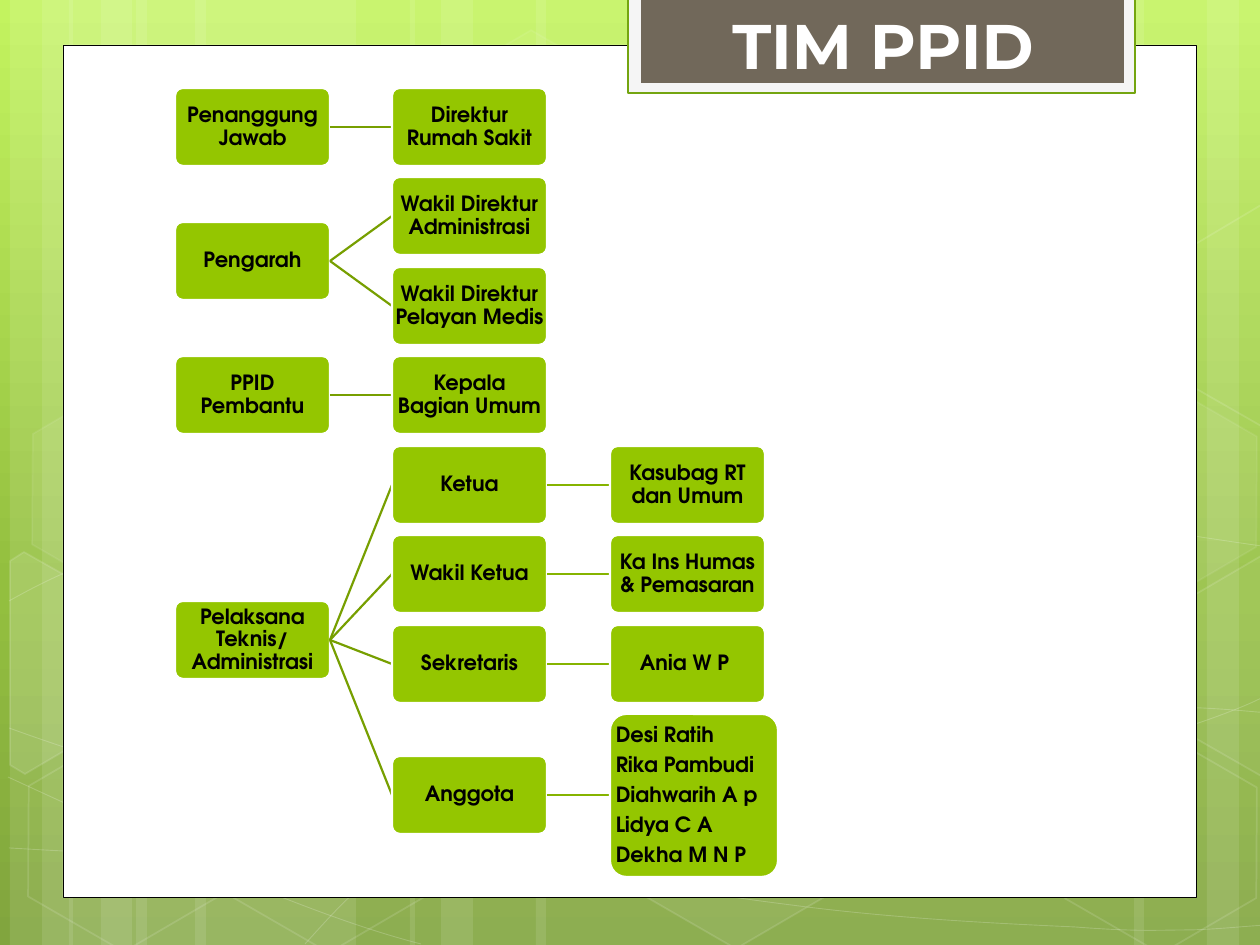
from dataclasses import dataclass
import copy

import pptx
import pptx.dml.color
import pptx.enum.shapes
import pptx.enum.text
import pptx.oxml
import pptx.oxml.ns
import pptx.util

SCALE = 914400 / 126
SLIDE_WIDTH, SLIDE_HEIGHT = 1260, 945
COLORS = {
    "sky": "C3F35F", "leaf": "93BF3F", "moss": "81A53E",
    "white": "FFFFFF", "black": "000000", "frame": "F5F5F5",
    "frame_line": "74A510", "brown": "71685A", "box": "94C600",
    "link_1": "779F00", "link_2": "86B400",
}
BODY_FONT, TITLE_FONT = "TeX Gyre Adventor", "Montserrat"
ALIGN = pptx.enum.text.PP_ALIGN
ANCHOR = pptx.enum.text.MSO_ANCHOR
SHAPE = pptx.enum.shapes.MSO_SHAPE

COLUMNS = (175, 392, 610)
BOX_WIDTH, BOX_HEIGHT = 155, 78
FIRST_TOP = 88
TWO_ROWS = 179


@dataclass(frozen=True)
class Role:
    lines: tuple[str, ...]
    children: tuple["Role", ...] = ()
    width: int = BOX_WIDTH
    height: int = BOX_HEIGHT
    inset: int = 0


@dataclass(frozen=True)
class Hexagon:
    left: int
    top: int
    fill: int | None
    line: int


def role(text: str, *children: Role, inset: int = 0) -> Role:
    return Role((text,), children, inset=inset)


MEMBERS = Role(("Desi Ratih", "Rika Pambudi", "Diahwarih A p", "Lidya C A", "Dekha M N P"),
               width=168, height=163, inset=1)
TEAM = (
    role("Penanggung Jawab", role("Direktur Rumah Sakit")),
    role("Pengarah", role("Wakil Direktur Administrasi"), role("Wakil Direktur Pelayan Medis")),
    role("PPID Pembantu", role("Kepala Bagian Umum", inset=2)),
    role("Pelaksana Teknis/ Administrasi",
         role("Ketua", role("Kasubag RT dan Umum")),
         role("Wakil Ketua", role("Ka Ins Humas & Pemasaran")),
         role("Sekretaris", role("Ania W P ")),
         role("Anggota", MEMBERS)),
)

BANDS = ((136, 220), (10, 63), (42, 105), (195, 220), (69, 63), (101, 105),
         (924, 220), (1207, 63), (1134, 105), (536, 388), (410, 63), (441, 105))
# Each curve is a start point followed by groups of three Bézier points.
CURVES = (
    ((9, 848), (77, 852), (145, 856), (239, 854), (334, 853), (451, 851), (577, 838),
     (703, 825), (882, 801), (998, 777), (1113, 753), (1231, 716), (1269, 694)),
    ((9, 601), (45, 581), (82, 562), (152, 543), (224, 524), (326, 496), (437, 488),
     (549, 479), (685, 478), (824, 488), (963, 498), (1193, 537), (1269, 547)),
    ((8, 777), (160, 847), (311, 916), (421, 944)),
    ((9, 728), (48, 742), (88, 756), (161, 776), (234, 795), (344, 827), (450, 848),
     (554, 869), (687, 892), (791, 905), (896, 919), (1008, 924), (1075, 927),
     (1140, 932), (1158, 930), (1191, 930), (1223, 929), (1246, 926), (1269, 925)),
    ((305, 944), (328, 919), (350, 893), (381, 871), (411, 848), (454, 822), (489, 805),
     (524, 788), (546, 779), (592, 767), (638, 755), (722, 737), (766, 728),
     (812, 719), (818, 719), (857, 717), (896, 713), (958, 709), (1000, 708),
     (1045, 707), (1116, 708), (1116, 708), (1144, 708), (1173, 708), (1201, 708),
     (1223, 709), (1245, 711), (1256, 712), (1268, 713), (1264, 712), (1268, 713)),
)
HEXAGONS = (
    Hexagon(421, 45, 4, 8), Hexagon(626, 742, 6, 12), Hexagon(14, 745, None, 12),
    Hexagon(18, 393, 7, 8), Hexagon(219, 746, None, 12), Hexagon(949, 571, 10, 12),
    Hexagon(1051, 747, None, 12), Hexagon(1051, 396, 7, 8),
)
CUT_HEXAGONS = (
    (((10, 561), (24, 552), (121, 607), (120, 718), (25, 774), (10, 765)), 10),
    (((1167, 611), (1261, 556), (1271, 562), (1271, 772), (1263, 777), (1167, 722)), 4),
    (((1167, 261), (1261, 205), (1273, 212), (1271, 422), (1263, 427), (1167, 372)), None),
)


def px(length: float) -> pptx.util.Emu:
    return pptx.util.Emu(round(length * SCALE))


def rgb(name: str) -> pptx.dml.color.RGBColor:
    return pptx.dml.color.RGBColor.from_string(COLORS[name])


def new_element(tag: str, attributes: str = ""):
    return pptx.oxml.parse_xml(f'<a:{tag} {pptx.oxml.ns.nsdecls("a")} {attributes}/>')


def set_opacity(shape, tag: str, percent: int) -> None:
    """Make the fill (a:solidFill) or the line (a:ln) of a shape see-through."""
    color = shape.element.spPr.find(pptx.oxml.ns.qn(tag)).find(".//" + pptx.oxml.ns.qn("a:srgbClr"))
    color.append(new_element("alpha", f'val="{percent * 1000}"'))


def style(shape, fill: str | None = None, line: str | None = None, line_width: float = 1,
          fill_opacity: int = 100, line_opacity: int = 100) -> None:
    shape.shadow.inherit = False
    if fill:
        shape.fill.solid()
        shape.fill.fore_color.rgb = rgb(fill)
        if fill_opacity < 100:
            set_opacity(shape, "a:solidFill", fill_opacity)
    else:
        shape.fill.background()
    if line:
        shape.line.color.rgb = rgb(line)
        shape.line.width = pptx.util.Pt(line_width)
        if line_opacity < 100:
            set_opacity(shape, "a:ln", line_opacity)
    else:
        shape.line.fill.background()


def add_box(slide, kind, left: int, top: int, width: int, height: int, **look):
    shape = slide.shapes.add_shape(kind, px(left), px(top), px(width), px(height))
    style(shape, **look)
    return shape


def add_path(slide, points, closed: bool, **look):
    builder = slide.shapes.build_freeform(*points[0], scale=SCALE)
    builder.add_line_segments(points[1:], close=closed)
    shape = builder.convert_to_shape()
    style(shape, **look)
    return shape


def bend(shape) -> None:
    """Merge every three line segments of a path into one cubic Bézier."""
    segments = list(shape.element.iter(pptx.oxml.ns.qn("a:lnTo")))
    for start in range(0, len(segments), 3):
        curve = new_element("cubicBezTo")
        segments[start].addprevious(curve)
        for segment in segments[start:start + 3]:
            curve.append(segment[0])
            segment.getparent().remove(segment)


def write(shape, lines: tuple[str, ...], *, font: str, size: int, color: str, align=ALIGN.CENTER,
          anchor=ANCHOR.MIDDLE, inset: tuple[int, int] = (0, 0),
          line_spacing: float = 1.0, space_after: float = 0) -> None:
    frame = shape.text_frame
    frame.word_wrap = True
    frame.vertical_anchor = anchor
    frame.margin_left = frame.margin_right = px(inset[0])
    frame.margin_top = frame.margin_bottom = px(inset[1])
    for index, line in enumerate(lines):
        paragraph = frame.add_paragraph() if index else frame.paragraphs[0]
        paragraph.alignment = align
        paragraph.line_spacing = line_spacing
        paragraph.space_after = pptx.util.Pt(space_after)
        run = paragraph.add_run()
        run.text = line
        run.font.name, run.font.size, run.font.bold = font, pptx.util.Pt(size), True
        run.font.color.rgb = rgb(color)


def draw_background(slide) -> None:
    fill = slide.background.fill
    fill.gradient()
    fill.gradient_angle = 270
    last = list(slide.element.iter(pptx.oxml.ns.qn("a:gs")))[-1]
    last.addnext(copy.deepcopy(last))
    for stop, (position, color) in zip(fill.gradient_stops,
                                       ((0, "sky"), (0.62, "leaf"), (1, "moss"))):
        stop.position = position
        stop.color.rgb = rgb(color)
    for left, width in BANDS:
        add_box(slide, SHAPE.RECTANGLE, left, 0, width, SLIDE_HEIGHT,
                fill="white", fill_opacity=10)
    for curve in CURVES:
        bend(add_path(slide, curve, False, line="white", line_width=0.5, line_opacity=20))
    for item in HEXAGONS:
        shape = add_box(slide, SHAPE.HEXAGON, item.left, item.top, 220, 192,
                        fill="white" if item.fill else None, fill_opacity=item.fill or 100,
                        line="white", line_opacity=item.line)
        shape.adjustments[0], shape.adjustments[1] = 0.285, 1.155
        shape.rotation = 30
    for points, opacity in CUT_HEXAGONS:
        add_path(slide, points, True, fill="white" if opacity else None,
                 fill_opacity=opacity or 100, line="white", line_opacity=12)


def draw_link(slide, depth: int, start: int, end: int) -> None:
    link = slide.shapes.add_connector(
        pptx.enum.shapes.MSO_CONNECTOR.STRAIGHT,
        px(COLUMNS[depth] + BOX_WIDTH), px(start), px(COLUMNS[depth + 1]), px(end))
    link.line.color.rgb = rgb(f"link_{depth + 1}")
    link.line.width = pptx.util.Pt(1.25)
    link.element.spPr.append(new_element("effectLst"))


def count_rows(member: Role) -> int:
    return sum(map(count_rows, member.children)) or 1


def place_children(member: Role, row: int) -> list[tuple[Role, int]]:
    """Pair each child with its first row."""
    placed = []
    for child in member.children:
        placed.append((child, row))
        row += count_rows(child)
    return placed


def middle_of(member: Role, row: int) -> int:
    centers = [middle_of(*placed) for placed in place_children(member, row)]
    if centers:
        return (centers[0] + centers[-1]) // 2
    return FIRST_TOP + row * TWO_ROWS // 2 + member.height // 2


def draw_role(slide, member: Role, row: int, depth: int = 0) -> None:
    middle = middle_of(member, row)
    box = add_box(slide, SHAPE.ROUNDED_RECTANGLE, COLUMNS[depth], middle - member.height // 2,
                  member.width, member.height, fill="box", line="white", line_width=1.25)
    box.adjustments[0] = 0.1
    write(box, member.lines, font=BODY_FONT, size=12, color="black", line_spacing=0.9,
          space_after=4.2, inset=(member.inset, 0),
          align=ALIGN.LEFT if len(member.lines) > 1 else ALIGN.CENTER)
    for child, child_row in place_children(member, row):
        draw_link(slide, depth, middle, middle_of(child, child_row))
        draw_role(slide, child, child_row, depth + 1)


def main() -> None:
    presentation = pptx.Presentation()
    presentation.slide_width, presentation.slide_height = px(SLIDE_WIDTH), px(SLIDE_HEIGHT)
    slide = presentation.slides.add_slide(presentation.slide_layouts[6])
    draw_background(slide)
    add_box(slide, SHAPE.RECTANGLE, 63, 45, 1134, 853, fill="white", line="black", line_width=0.5)
    add_box(slide, SHAPE.RECTANGLE, 628, -2, 507, 95,
            fill="frame", line="frame_line", line_width=1.25)
    add_box(slide, SHAPE.RECTANGLE, 641, -2, 483, 85, fill="brown")
    title = slide.shapes.add_textbox(px(650), px(0), px(466), px(89))
    write(title, ("TIM PPID",), font=TITLE_FONT, size=36, color="white",
          anchor=ANCHOR.TOP, inset=(13, 7))
    for member, row in place_children(Role((), TEAM), 0):
        draw_role(slide, member, row)
    presentation.save("out.pptx")


if __name__ == "__main__":
    main()
